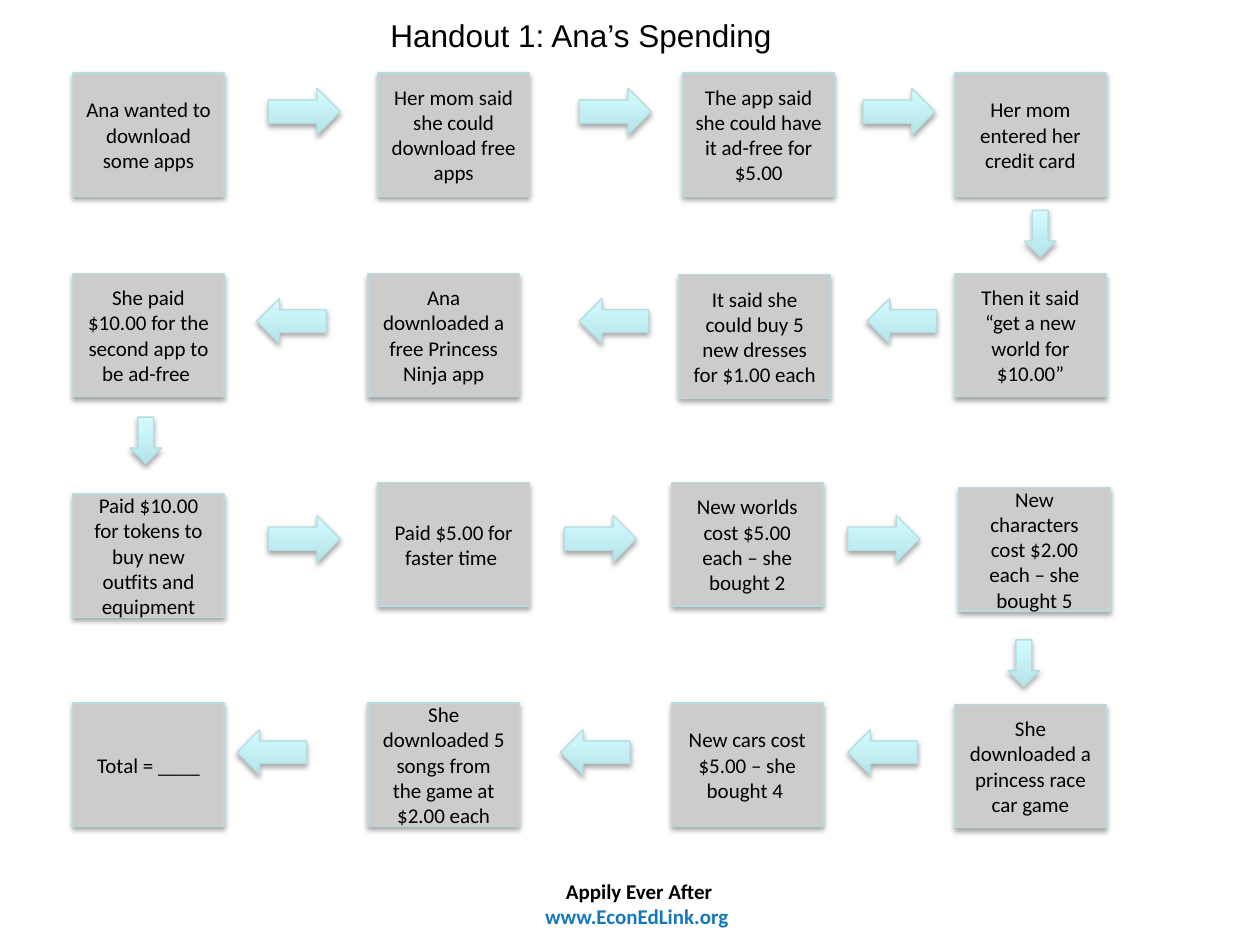
"""Build the handout slide that follows Ana's spending through a chain of boxes."""
from typing import NamedTuple

from lxml.etree import SubElement
from pptx import Presentation
from pptx.dml.color import RGBColor
from pptx.enum.shapes import MSO_SHAPE
from pptx.enum.text import MSO_ANCHOR, MSO_AUTO_SIZE, PP_ALIGN
from pptx.oxml.ns import qn
from pptx.util import Cm, Pt

BLACK = RGBColor(0x00, 0x00, 0x00)
GREY = RGBColor(0xCC, 0xCC, 0xCC)
EDGE = RGBColor(0xB6, 0xDC, 0xDF)
AQUA_DARK = RGBColor(0xB5, 0xE5, 0xE9)
AQUA_LIGHT = RGBColor(0xD3, 0xFB, 0xFF)
LINK_BLUE = RGBColor(0x15, 0x78, 0xBC)

BOX_SIZE = (3.05, 2.49)
RIGHT, LEFT, DOWN = MSO_SHAPE.RIGHT_ARROW, MSO_SHAPE.LEFT_ARROW, MSO_SHAPE.DOWN_ARROW
ARROW_SIZES = {RIGHT: (1.45, 0.94), LEFT: (1.4, 0.91), DOWN: (0.64, 0.94)}


class Step(NamedTuple):
    left: float
    top: float
    text: str


class ArrowRow(NamedTuple):
    kind: MSO_SHAPE
    top: float
    lefts: tuple


STEPS = [
    Step(1.47, 1.47, "Ana wanted to download some apps"),
    Step(7.62, 1.47, "Her mom said she could download free apps"),
    Step(13.77, 1.47, "The app said she could have it ad-free for $5.00"),
    Step(19.25, 1.47, "Her mom entered her credit card"),
    Step(19.25, 5.51, "Then it said “get a new world for $10.00”"),
    Step(13.69, 5.54, "It said she could buy 5 new dresses for $1.00 each"),
    Step(7.42, 5.51, "Ana downloaded a free Princess Ninja app"),
    Step(1.47, 5.51, "She paid $10.00 for the second app to be ad-free "),
    Step(1.47, 9.96, "Paid $10.00 for tokens to buy new outfits and equipment"),
    Step(7.62, 9.73, "Paid $5.00 for faster time "),
    Step(13.54, 9.73, "New worlds cost $5.00 each – she bought 2"),
    Step(19.33, 9.83, "New characters cost $2.00 each – she bought 5"),
    Step(19.25, 14.2, "She downloaded a princess race car game"),
    Step(13.54, 14.17, "New cars cost $5.00 – she bought 4 "),
    Step(7.42, 14.17, "She downloaded 5 songs from the game at $2.00 each"),
    Step(1.47, 14.17, "Total = ____"),
]

ARROW_ROWS = [
    ArrowRow(RIGHT, 1.78, (5.41, 11.68, 17.4)),
    ArrowRow(DOWN, 4.24, (20.65,)),
    ArrowRow(LEFT, 6.02, (17.48, 11.68, 5.18)),
    ArrowRow(DOWN, 8.41, (2.62,)),
    ArrowRow(RIGHT, 10.39, (5.41, 11.38, 17.09)),
    ArrowRow(DOWN, 12.9, (20.32,)),
    ArrowRow(LEFT, 14.71, (17.09, 11.3, 4.78)),
]


def write(p, text: str, *, size=12, font="Calibri", color=BLACK, bold=False,
          align=PP_ALIGN.CENTER) -> None:
    p.alignment = align
    r = p.add_run()
    r.text = text
    r.font.size = Pt(size)
    r.font.name = font
    r.font.bold = bold
    r.font.color.rgb = color


def add_shadowed(s, kind, left: float, top: float, size: tuple):
    sp = s.shapes.add_shape(kind, Cm(left), Cm(top), *map(Cm, size))
    sp.line.color.rgb = EDGE
    sp.line.width = Pt(0.75)
    sp.shadow.inherit = False
    effects = sp._element.spPr.find(qn("a:effectLst"))
    shadow = SubElement(effects, qn("a:outerShdw"), blurRad="40000", dist="23000",
                        dir="5400000", rotWithShape="0")
    black = SubElement(shadow, qn("a:srgbClr"), val="000000")
    SubElement(black, qn("a:alpha"), val="35000")
    return sp


def add_step(s, step: Step) -> None:
    sp = add_shadowed(s, MSO_SHAPE.RECTANGLE, step.left, step.top, BOX_SIZE)
    sp.fill.solid()
    sp.fill.fore_color.rgb = GREY
    tf = sp.text_frame
    tf.word_wrap = True
    tf.vertical_anchor = MSO_ANCHOR.MIDDLE
    write(tf.paragraphs[0], step.text)


def add_arrows(s, row: ArrowRow) -> None:
    for left in row.lefts:
        sp = add_shadowed(s, row.kind, left, row.top, ARROW_SIZES[row.kind])
        sp.fill.gradient()
        sp.fill.gradient_angle = 90
        for stop, color in zip(sp.fill.gradient_stops, (AQUA_DARK, AQUA_LIGHT)):
            stop.color.rgb = color


def add_text_frame(s, left: float, top: float, width: float, height: float):
    tf = s.shapes.add_textbox(Cm(left), Cm(top), Cm(width), Cm(height)).text_frame
    tf.word_wrap = True
    return tf


def main() -> None:
    prs = Presentation()
    prs.slide_width, prs.slide_height = Cm(25.4), Cm(19.05)
    s = prs.slides.add_slide(prs.slide_layouts[6])

    for row in ARROW_ROWS:
        add_arrows(s, row)
    for step in STEPS:
        add_step(s, step)

    footer = add_text_frame(s, 1.91, 17.58, 21.95, 1.27)
    write(footer.paragraphs[0], "Appily Ever After", bold=True)
    write(footer.add_paragraph(), "www.EconEdLink.org ", bold=True, color=LINK_BLUE)

    title = add_text_frame(s, 7.62, 0.2, 10.36, 1.02)
    title.auto_size = MSO_AUTO_SIZE.SHAPE_TO_FIT_TEXT
    write(title.paragraphs[0], "Handout 1: Ana’s Spending", size=18, font="Arial",
          align=PP_ALIGN.LEFT)

    prs.save("out.pptx")


if __name__ == "__main__":
    main()
